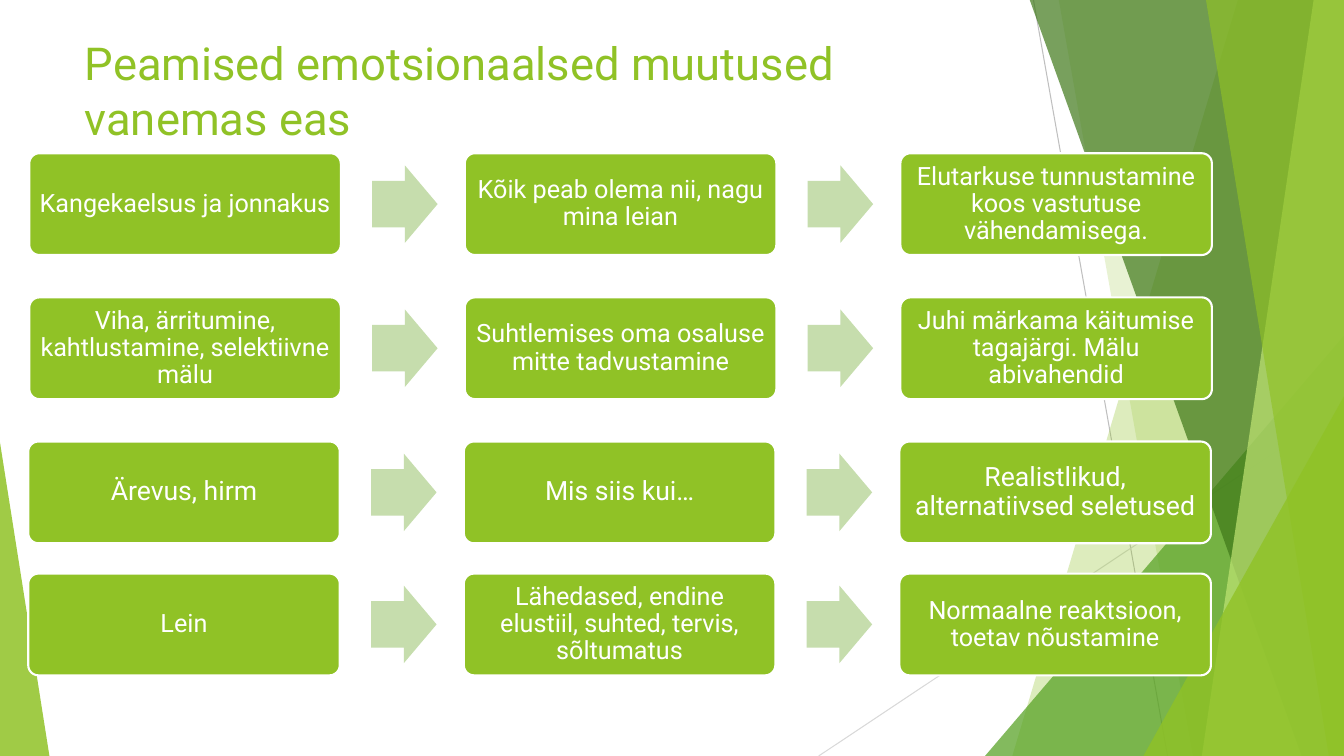
"""Build the slide on the main emotional changes in old age."""
from lxml import etree
from pptx import Presentation
from pptx.dml.color import RGBColor
from pptx.enum.shapes import MSO_CONNECTOR, MSO_SHAPE
from pptx.enum.text import MSO_ANCHOR, MSO_AUTO_SIZE, PP_ALIGN
from pptx.oxml.ns import qn
from pptx.util import Inches, Pt

STRAIGHT = MSO_CONNECTOR.STRAIGHT
TRIANGLE = MSO_SHAPE.ISOSCELES_TRIANGLE
ROUNDED = MSO_SHAPE.ROUNDED_RECTANGLE
ARROW = MSO_SHAPE.RIGHT_ARROW
MIDDLE, TOP = MSO_ANCHOR.MIDDLE, MSO_ANCHOR.TOP
CENTER, LEFT = PP_ALIGN.CENTER, PP_ALIGN.LEFT
NO_AUTOFIT = MSO_AUTO_SIZE.NONE

FONT = "Roboto"
COLORS = {
    "green": "90C226",
    "leaf": "54A021",
    "forest": "3F7819",
    "lime": "C0E474",
    "arrow": "C6DDAD",
    "white": "FFFFFF",
    "gray": "BFBFBF",
    "pale gray": "D9D9D9",
}


def paint(shape, color, opacity=100):
    """Give a shape a plain fill without line or shadow."""
    shape.shadow.inherit = False
    shape.line.fill.background()
    shape.fill.solid()
    shape.fill.fore_color.rgb = RGBColor.from_string(COLORS[color])
    if opacity < 100:
        color_element = shape._element.spPr.find(qn("a:solidFill"))[0]
        etree.SubElement(color_element, qn("a:alpha"), val=str(opacity * 1000))


def write(shape, text, size, color, alignment, frame_format):
    """Write one formatted paragraph into a shape."""
    frame = shape.text_frame
    frame.text = text
    for name, value in frame_format.items():
        setattr(frame, name, value)
    paragraph = frame.paragraphs[0]
    paragraph.alignment = alignment
    font = paragraph.runs[0].font
    font.name, font.size = FONT, Pt(size)
    font.color.rgb = RGBColor.from_string(COLORS[color])
    return paragraph


presentation = Presentation()
presentation.slide_width = Inches(13.33)
presentation.slide_height = Inches(7.5)
slide = presentation.slides.add_slide(presentation.slide_layouts[5])
shapes = slide.shapes

rays = [
    (10.25, 0, 11.58, 7.5, "gray"),
    (13.33, 4.03, 8.12, 7.5, "pale gray"),
]
for *ends, color in rays:
    ray = shapes.add_connector(STRAIGHT, *[Inches(end) for end in ends])
    ray.line.width = Pt(0.75)
    ray.line.color.rgb = RGBColor.from_string(COLORS[color])
    etree.SubElement(ray._element.spPr, qn("a:effectLst"))

bands = [
    (12.28, 10.04, "green", 30),
    (10.5, 11.83, "green", 20),
    (10.21, 12.91, "forest", 70),
    (13.03, 11.92, "lime", 70),
    (11.96, 13.18, "green", 65),
]
triangles = [
    (9.77, 3.33, 3.56, 4.17, 1, "leaf", 72),
    (11.34, 3.93, 1.99, 3.57, 1, "green", 80),
    (0, 4.39, 0.49, 3.11, 0, "green", 85),
]
facets = bands[:2] + triangles[:1] + bands[2:] + triangles[1:]
for *geometry, color, opacity in facets:
    if len(geometry) == 2:
        top_left, bottom_left = geometry
        builder = shapes.build_freeform(Inches(top_left), Inches(-0.01), scale=1.0)
        corners = [(13.33, -0.01), (13.33, 7.5), (bottom_left, 7.5)]
        builder.add_line_segments([(Inches(x), Inches(y)) for x, y in corners])
        facet = builder.convert_to_shape()
    else:
        *box, apex = geometry
        facet = shapes.add_shape(TRIANGLE, *[Inches(length) for length in box])
        facet.adjustments[0] = apex
    paint(facet, color, opacity)

title = shapes.title
title.left, title.top = Inches(0.74), Inches(0.3)
title.width, title.height = Inches(9.4), Inches(1.01)
title_format = {
    "word_wrap": True,
    "auto_size": NO_AUTOFIT,
    "vertical_anchor": TOP,
    "margin_right": Inches(0.2),
}
write(title, "Peamised emotsionaalsed muutused vanemas eas", 32.4, "green", LEFT, title_format)

COLUMN_PITCH = 4.32
CARD_WIDTH, CARD_HEIGHT = 3.09, 1.01
ARROW_WIDTH, ARROW_HEIGHT = 0.65, 0.77
ARROW_OFFSET = 3.4
rows = [
    (0.29, 1.52, 18, [
        "Kangekaelsus ja jonnakus",
        "Kõik peab olema nii, nagu mina leian",
        "Elutarkuse tunnustamine koos vastutuse vähendamisega.",
    ]),
    (0.29, 2.95, 18, [
        "Viha, ärritumine, kahtlustamine, selektiivne mälu",
        "Suhtlemises oma osaluse mitte tadvustamine",
        "Juhi märkama käitumise tagajärgi. Mälu abivahendid",
    ]),
    (0.28, 4.38, 19, [
        "Ärevus, hirm",
        "Mis siis kui…",
        "Realistlikud, alternatiivsed seletused",
    ]),
    (0.28, 5.69, 18, [
        "Lein",
        "Lähedased, endine elustiil, suhted, tervis, sõltumatus",
        "Normaalne reaktsioon, toetav nõustamine",
    ]),
]
card_format = {"word_wrap": True, "vertical_anchor": MIDDLE}
for side in ("left", "top", "right", "bottom"):
    card_format[f"margin_{side}"] = Inches(0.07)

for row_left, top, size, texts in rows:
    for column, text in enumerate(texts):
        left = row_left + column * COLUMN_PITCH
        card = shapes.add_shape(
            ROUNDED, Inches(left), Inches(top), Inches(CARD_WIDTH), Inches(CARD_HEIGHT)
        )
        card.adjustments[0] = 0.1
        paint(card, "green")
        card.line.color.rgb = RGBColor.from_string(COLORS["white"])
        card.line.width = Pt(1.5)
        paragraph = write(card, text, size, "white", CENTER, card_format)
        paragraph.line_spacing = 0.9
        if column < len(texts) - 1:
            arrow = shapes.add_shape(
                ARROW,
                Inches(left + ARROW_OFFSET),
                Inches(top + (CARD_HEIGHT - ARROW_HEIGHT) / 2),
                Inches(ARROW_WIDTH),
                Inches(ARROW_HEIGHT),
            )
            arrow.adjustments[0] = 0.6
            arrow.adjustments[1] = 0.5
            paint(arrow, "arrow")

presentation.save("out.pptx")
